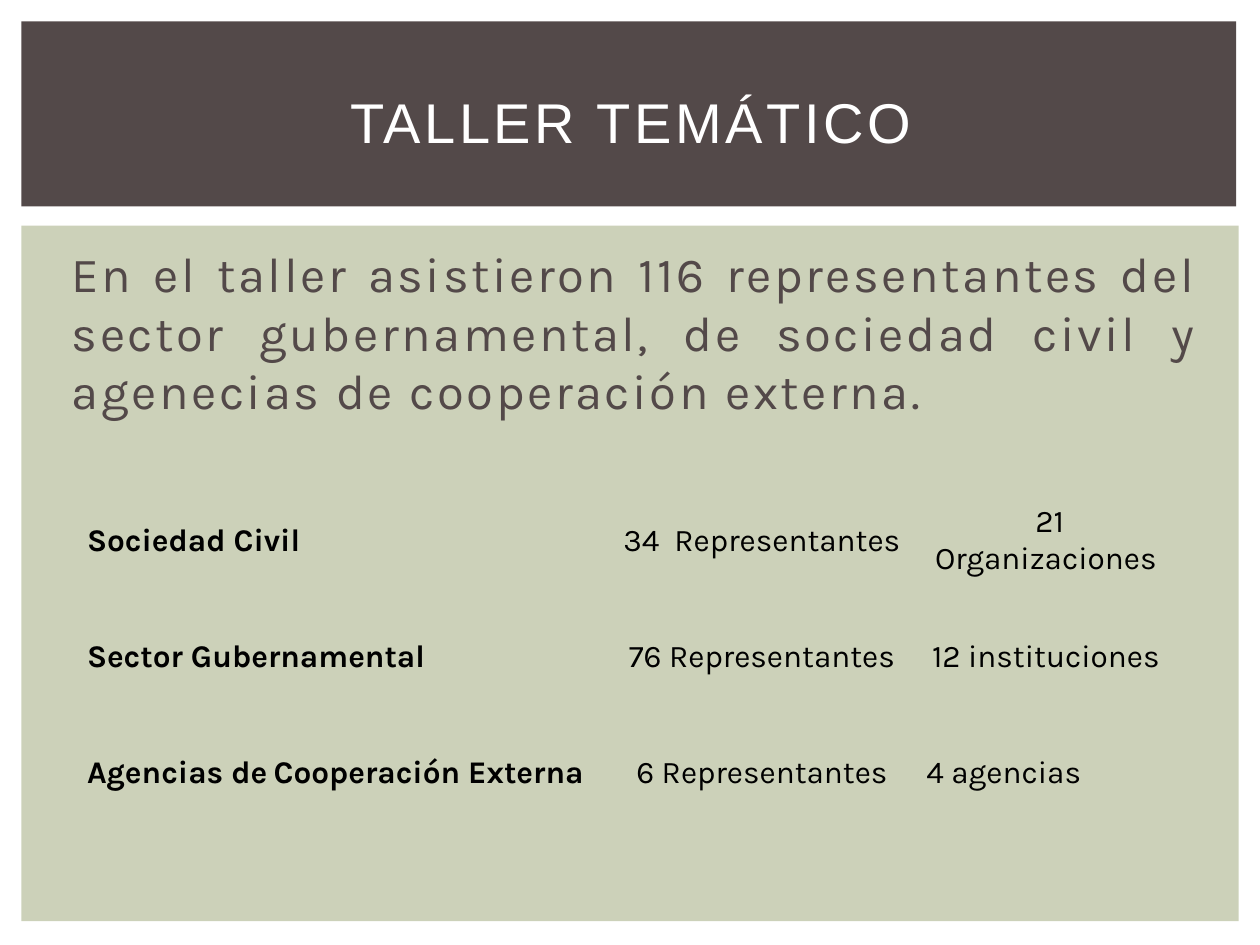
"""Build the workshop attendance slide with its title band and table."""
from dataclasses import dataclass

from pptx import Presentation, util as u
from pptx.dml.color import RGBColor
from pptx.enum import shapes, text


@dataclass(frozen=True)
class Theme:
    dark: str = "534949"
    sage: str = "CCD1B9"
    white: str = "FFFFFF"
    black: str = "000000"
    head_font: str = "Arial"
    body_font: str = "Karla"
    title: int = 32
    body: int = 28
    cell: int = 18
    gap: int = 14


T = Theme()
LEFT, CENTER, JUSTIFY = text.PP_ALIGN.LEFT, text.PP_ALIGN.CENTER, text.PP_ALIGN.JUSTIFY
NO_STYLE = "{2D5ABB26-0587-4C30-8999-92F81FD0307C}"


def add_text(p, words, *, size=T.cell, color=T.black, font=T.body_font,
             bold=False, align=LEFT, spacing=0):
    p.alignment = align
    r = p.add_run()
    r.text = words
    r.font.name, r.font.size, r.font.bold = font, u.Pt(size), bold
    r.font.color.rgb = RGBColor.from_string(color)
    if spacing:
        r.font._element.set("spc", str(spacing))


prs = Presentation()
prs.slide_width, prs.slide_height = u.Cm(25.4), u.Cm(19.05)
s = prs.slides.add_slide(prs.slide_layouts[6])

panels = [
    (T.sage, (0.43, 4.55, 24.54, 14.02)),
    (T.dark, (0.43, 0.43, 24.49, 3.73)),
]
for color, box in panels:
    sp = s.shapes.add_shape(shapes.MSO_SHAPE.RECTANGLE, *map(u.Cm, box))
    sp.shadow.inherit = False
    sp.fill.solid()
    sp.fill.fore_color.rgb = RGBColor.from_string(color)
    sp.line.fill.background()

blocks = [
    ("En el taller asistieron 116 representantes del sector gubernamental, "
     "de sociedad civil y agenecias de cooperación externa.",
     (1.07, 4.78, 23.34, 12.24), text.MSO_ANCHOR.TOP, 0.38, 5.6,
     dict(size=T.body, color=T.dark, align=JUSTIFY, spacing=150)),
    ("TALLER TEMÁTICO",
     (1.07, 0.99, 23.29, 2.92), text.MSO_ANCHOR.MIDDLE, 0.25, 0,
     dict(size=T.title, color=T.white, font=T.head_font, align=CENTER, spacing=200)),
]
for words, box, anchor, inset, before, style in blocks:
    tf = s.shapes.add_textbox(*map(u.Cm, box)).text_frame
    tf.word_wrap = True
    tf.vertical_anchor = anchor
    tf.margin_left = u.Cm(inset)
    p = tf.paragraphs[0]
    p.space_before = u.Pt(before)
    add_text(p, words, **style)

rows = [
    (["Sociedad Civil"], "34  Representantes", "21 Organizaciones ", CENTER),
    (["Sector Gubernamental"], "76 Representantes", "12 instituciones ", CENTER),
    (["Agencias de", " ", "Cooperación Externa"], "6 Representantes", "4 agencias", LEFT),
]
widths = [10.8, 6.12, 5.48]
row_height = 2.34
frame = s.shapes.add_table(len(rows), len(widths), u.Cm(1.5), u.Cm(9.73),
                           u.Cm(sum(widths)), u.Cm(row_height * len(rows)))
table = frame.table
table.first_row = table.horz_banding = False
table._tbl.tblPr.xpath("a:tableStyleId")[0].text = NO_STYLE
for column, width in zip(table.columns, widths):
    column.width = u.Cm(width)
for row, (sector, people, groups, align) in zip(table.rows, rows):
    row.height = u.Cm(row_height)
    for cell in row.cells:
        cell.fill.background()
        cell.vertical_anchor = text.MSO_ANCHOR.MIDDLE
    name, count, bodies = [cell.text_frame.paragraphs[0] for cell in row.cells]
    for part in sector:
        add_text(name, part, size=T.cell if part.strip() else T.gap, bold=True)
    add_text(count, people, align=CENTER)
    add_text(bodies, groups, align=align)

prs.save("out.pptx")
